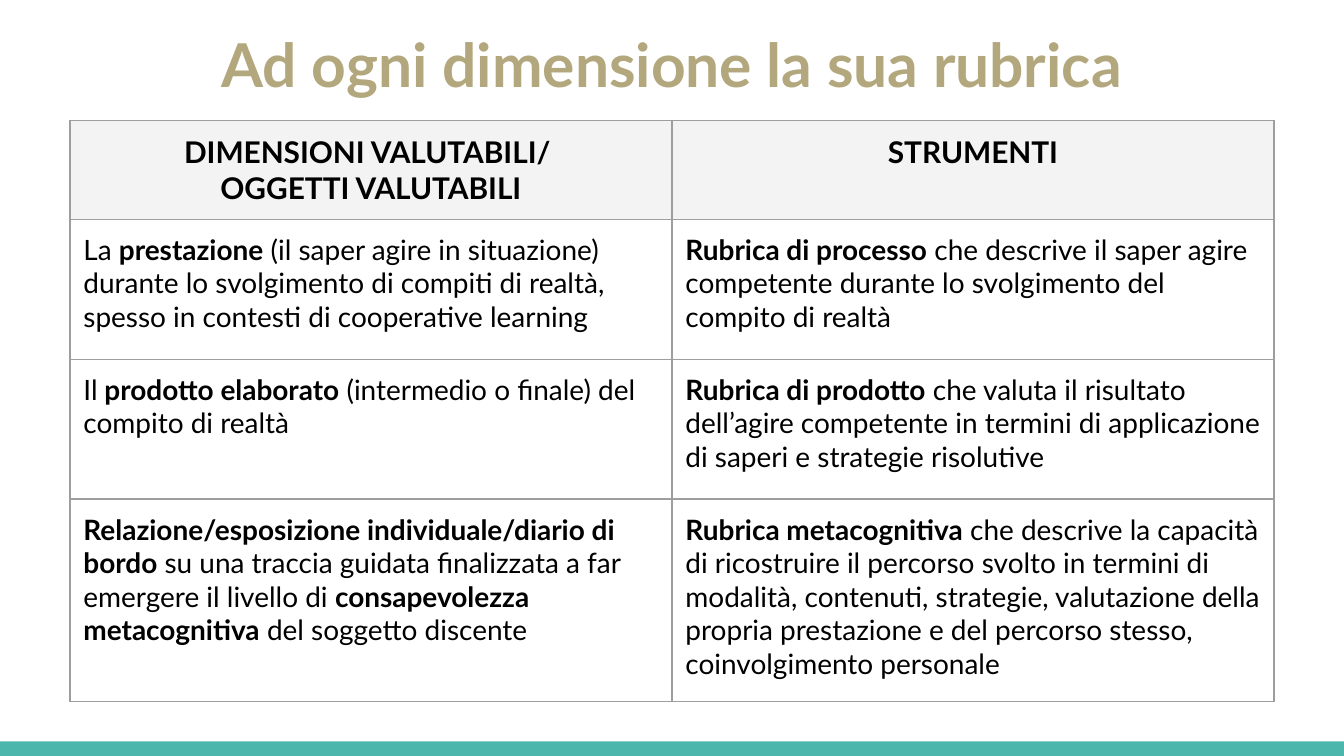
from lxml import etree
from pptx import Presentation
from pptx.dml.color import RGBColor
from pptx.enum.shapes import MSO_SHAPE
from pptx.enum.text import MSO_ANCHOR, PP_ALIGN
from pptx.oxml.ns import qn
from pptx.util import Pt

RECT = MSO_SHAPE.RECTANGLE
TOP = MSO_ANCHOR.TOP
LEFT, CENTER = PP_ALIGN.LEFT, PP_ALIGN.CENTER

TITLE = "Ad ogni dimensione la sua rubrica"

# Each cell is a list of paragraphs, each paragraph a list of (text, bold) runs.
HEAD = [
    [[("DIMENSIONI VALUTABILI/ ", True)], [("OGGETTI VALUTABILI", True)]],
    [[("STRUMENTI", True)]],
]
BODY = [
    [
        [[("La ", False), ("prestazione", True),
          (" (il saper agire in situazione) durante lo svolgimento di compiti "
           "di realtà, spesso in contesti di cooperative learning", False)]],
        [[("Rubrica di processo", True),
          (" che descrive il saper agire competente durante lo svolgimento "
           "del compito di realtà", False)]],
    ],
    [
        [[("Il", False), (" prodotto elaborato", True),
          (" (intermedio o finale) del compito di realtà", False)]],
        [[("Rubrica di prodotto", True),
          (" che valuta il risultato dell’agire competente in termini di "
           "applicazione di saperi e strategie risolutive", False)]],
    ],
    [
        [[("Relazione/esposizione individuale/diario di bordo", True),
          (" su una traccia guidata finalizzata a far emergere il livello di ",
           False),
          ("consapevolezza metacognitiva", True),
          (" del soggetto discente", False)]],
        [[("Rubrica metacognitiva", True),
          (" che descrive la capacità di ricostruire il percorso svolto in "
           "termini di modalità, contenuti, strategie, valutazione della "
           "propria prestazione e del percorso stesso, coinvolgimento "
           "personale", False)]],
    ],
]

THEME = {
    "font": "Lato",
    "title": ("B3A77D", 32.4),
    "head": ("000000", 16),
    "body": ("000000", 15),
    "shade": "F3F3F3",
    "rule": "9E9E9E",
    "bar": "4DB6AC",
}

WIDE, HIGH = 720, 405
BAR = 7.8
SIDE = 37.5
TABLE_TOP = 64.6
ROWS = [47, 75, 75, 108.6]
INSET = 7.2
RULE = 0.75


def color(name):
    return RGBColor.from_string(name)


def write(frame, paras, style, align):
    tint, size = THEME[style]
    for i, runs in enumerate(paras):
        para = frame.paragraphs[0] if i == 0 else frame.add_paragraph()
        para.alignment = align
        for text, bold in runs:
            run = para.add_run()
            run.text = text
            font = run.font
            font.name, font.size, font.bold = THEME["font"], Pt(size), bold
            font.color.rgb = color(tint)


def pad(box):
    """Set equal insets on a cell or text frame."""
    box.margin_left = box.margin_right = Pt(INSET)
    box.margin_top = box.margin_bottom = Pt(INSET)
    box.vertical_anchor = TOP


def border(cell):
    props = cell._tc.get_or_add_tcPr()
    for i, side in enumerate(("lnL", "lnR", "lnT", "lnB")):
        line = etree.Element(qn("a:" + side), w=str(Pt(RULE)))
        fill = etree.SubElement(line, qn("a:solidFill"))
        etree.SubElement(fill, qn("a:srgbClr"), val=THEME["rule"])
        props.insert(i, line)


def add_bar(slide):
    bar = slide.shapes.add_shape(RECT, 0, Pt(HIGH - BAR), Pt(WIDE), Pt(BAR))
    bar.shadow.inherit = False
    bar.fill.solid()
    bar.fill.fore_color.rgb = color(THEME["bar"])
    bar.line.fill.background()


def add_title(slide):
    left = 24.5
    box = slide.shapes.add_textbox(Pt(left), Pt(7.2), Pt(WIDE - 2 * left), Pt(45.4))
    frame = box.text_frame
    frame.word_wrap = True
    pad(frame)
    write(frame, [[(TITLE, True)]], "title", CENTER)


def add_grid(slide):
    cells = [HEAD] + BODY
    span = WIDE - 2 * SIDE
    grid = slide.shapes.add_table(
        len(cells), len(HEAD), Pt(SIDE), Pt(TABLE_TOP), Pt(span), Pt(sum(ROWS))
    ).table
    grid.first_row = grid.horz_banding = False
    for col in grid.columns:
        col.width = Pt(span / len(HEAD))
    for r, row in enumerate(cells):
        grid.rows[r].height = Pt(ROWS[r])
        for c, paras in enumerate(row):
            cell = grid.cell(r, c)
            pad(cell)
            if r == 0:
                cell.fill.solid()
                cell.fill.fore_color.rgb = color(THEME["shade"])
                write(cell.text_frame, paras, "head", CENTER)
            else:
                cell.fill.background()
                write(cell.text_frame, paras, "body", LEFT)
            border(cell)


def main():
    deck = Presentation()
    deck.slide_width, deck.slide_height = Pt(WIDE), Pt(HIGH)
    slide = deck.slides.add_slide(deck.slide_layouts[6])
    add_bar(slide)
    add_title(slide)
    add_grid(slide)
    deck.save("out.pptx")


if __name__ == "__main__":
    main()
